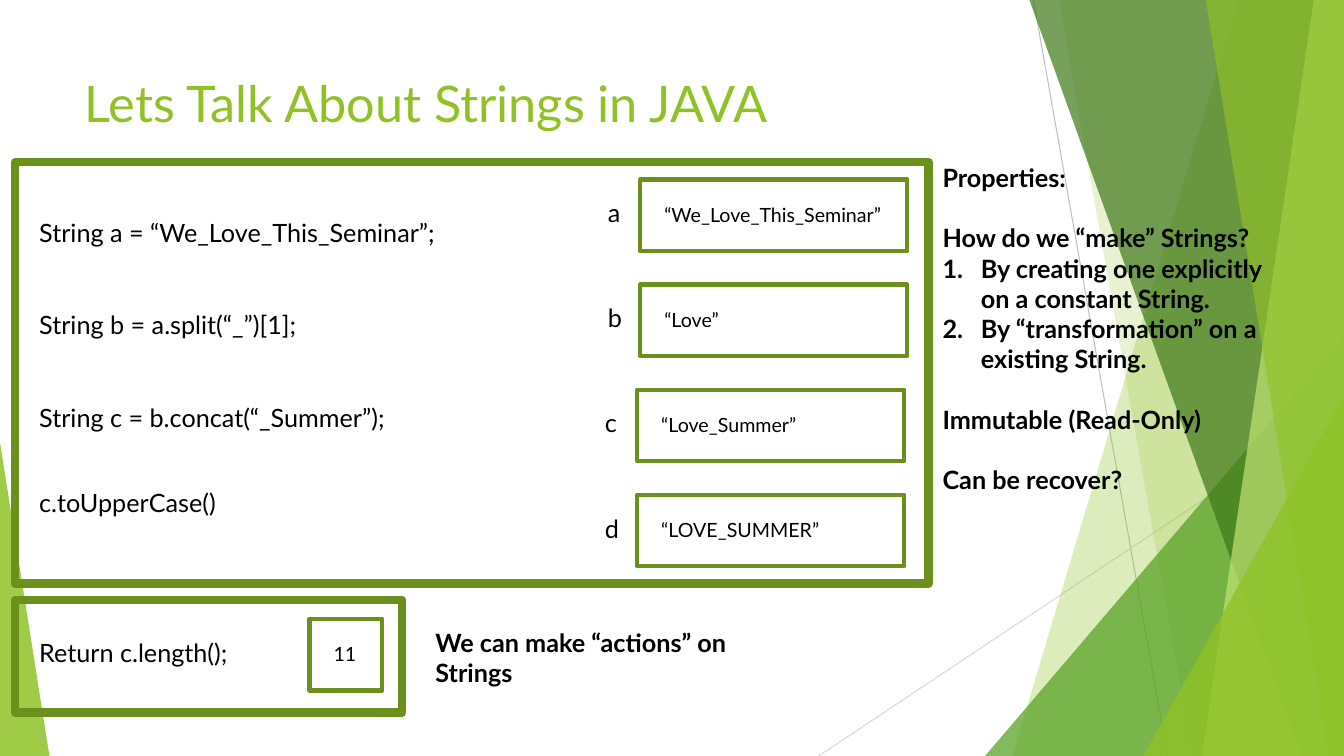
from lxml import etree
from pptx import Presentation
from pptx.dml.color import RGBColor
from pptx.enum import shapes, text
from pptx.oxml.ns import qn
from pptx.util import Inches, Pt

WIDE, HIGH = 13.33, 7.5
FONT = "Lato"
COLORS = {
    "lime": "90C226", "leaf": "54A021", "pine": "3F7819", "pale": "C0E474",
    "frame": "6B901C", "ink": "000000", "gray": "BFBFBF", "mist": "D9D9D9",
}
# top x, bottom x, color, opacity in percent
BANDS = [
    (12.28, 10.04, "lime", 30),
    (10.5, 11.83, "lime", 20),
    (10.21, 12.91, "pine", 70),
    (13.03, 11.92, "pale", 70),
    (11.96, 13.18, "lime", 65),
]
CODE = [
    (2.11, "String a = “We_Love_This_Seminar”;"),
    (3.02, "String b = a.split(“_”)[1];"),
    (3.94, "String c = b.concat(“_Summer”);"),
    (4.79, "c.toUpperCase()"),
    (6.27, "Return c.length();"),
]
# name, value, left edge of the box
VALUES = [
    ("a", "“We_Love_This_Seminar”", 6.35),
    ("b", "“Love”", 6.35),
    ("c", "“Love_Summer”", 6.32),
    ("d", "“LOVE_SUMMER”", 6.32),
]
# words, numbered, space before in points
NOTES = [
    ("Properties:", False, 0),
    ("How do we “make” Strings?", False, 21.6),
    ("By creating one explicitly on a constant String.", True, 0),
    ("By “transformation” on a existing String.", True, 0),
    ("Immutable (Read-Only)", False, 21.6),
    ("Can be recover?", False, 21.6),
]


def rgb(name):
    return RGBColor.from_string(COLORS[name])


def write(para, words, size=18, color="ink", bold=False, before=0):
    para.alignment = text.PP_ALIGN.LEFT
    para.space_before = Pt(before)
    run = para.add_run()
    run.text = words
    font = run.font
    font.name, font.size, font.bold = FONT, Pt(size), bold
    font.color.rgb = rgb(color)


def number(para):
    props = para._p.get_or_add_pPr()
    props.set("marL", str(Inches(0.38)))
    props.set("indent", str(Inches(-0.38)))
    etree.SubElement(props, qn("a:buAutoNum"), type="arabicPeriod")


def add_text(slide, left, top, width, height, wrap=True):
    box = slide.shapes.add_textbox(
        Inches(left), Inches(top), Inches(width), Inches(height))
    box.text_frame.word_wrap = wrap
    return box.text_frame


def label(slide, words, left, top, width, height=0.4, wrap=True, **form):
    frame = add_text(slide, left, top, width, height, wrap)
    write(frame.paragraphs[0], words, **form)


def add_box(slide, left, top, width, height, weight=3):
    box = slide.shapes.add_shape(
        shapes.MSO_SHAPE.RECTANGLE,
        Inches(left), Inches(top), Inches(width), Inches(height))
    box.shadow.inherit = False
    box.fill.background()
    box.line.color.rgb = rgb("frame")
    box.line.width = Pt(weight)


def tint(shape, color, alpha):
    """Fill without outline, at an opacity in percent."""
    shape.shadow.inherit = False
    shape.line.fill.background()
    shape.fill.solid()
    shape.fill.fore_color.rgb = rgb(color)
    tone = shape.fill._xPr.find(qn("a:solidFill"))[0]
    etree.SubElement(tone, qn("a:alpha"), val=str(alpha * 1000))


def add_band(slide, top, base, color, alpha):
    """Quad from two x values to the right edge of the slide."""
    build = slide.shapes.build_freeform(Inches(top), 0)
    build.add_line_segments([
        (Inches(WIDE), 0), (Inches(WIDE), Inches(HIGH)),
        (Inches(base), Inches(HIGH))])
    tint(build.convert_to_shape(), color, alpha)


def add_peak(slide, left, top, width, tip, color, alpha):
    """Triangle that stands on the bottom edge of the slide."""
    peak = slide.shapes.add_shape(
        shapes.MSO_SHAPE.ISOSCELES_TRIANGLE,
        Inches(left), Inches(top), Inches(width), Inches(HIGH - top))
    peak.adjustments[0] = tip
    tint(peak, color, alpha)


def add_line(slide, x1, y1, x2, y2, color):
    line = slide.shapes.add_connector(
        shapes.MSO_CONNECTOR.STRAIGHT,
        Inches(x1), Inches(y1), Inches(x2), Inches(y2))
    line.line.color.rgb = rgb(color)
    line.line.width = Pt(0.75)
    etree.SubElement(line._element.spPr, qn("a:effectLst"))


def add_decor(slide):
    add_line(slide, 10.25, 0, 11.58, HIGH, "gray")
    add_line(slide, WIDE, 4.03, 8.12, HIGH, "mist")
    for band in BANDS[:2]:
        add_band(slide, *band)
    add_peak(slide, 9.77, 3.33, 3.56, 1, "leaf", 72)
    for band in BANDS[2:]:
        add_band(slide, *band)
    add_peak(slide, 11.34, 3.93, 1.99, 1, "lime", 80)
    add_peak(slide, 0, 4.39, 0.49, 0, "lime", 85)


def add_title(slide, words):
    title = slide.shapes.title
    title.left, title.top = Inches(0.74), Inches(0.67)
    title.width, title.height = Inches(9.4), Inches(1.44)
    title.text_frame.vertical_anchor = text.MSO_ANCHOR.TOP
    write(title.text_frame.paragraphs[0], words, size=36, color="lime")


def add_value(slide, words, left, top, width):
    add_box(slide, left, top, width, 0.71)
    label(slide, words, left + 0.14, top + 0.18, width - 0.14, 0.34, size=14)


def add_notes(slide):
    frame = add_text(slide, 9.25, 1.56, 3.59, 3.74)
    for i, (words, listed, before) in enumerate(NOTES):
        para = frame.add_paragraph() if i else frame.paragraphs[0]
        write(para, words, bold=True, before=before)
        if listed:
            number(para)


def main():
    deck = Presentation()
    deck.slide_width, deck.slide_height = Inches(WIDE), Inches(HIGH)
    slide = deck.slides.add_slide(deck.slide_layouts[5])
    add_decor(slide)
    add_title(slide, "Lets Talk About Strings in JAVA")
    for top, words in CODE:
        label(slide, words, 0.29, top, 4.35, wrap=False)
    for i, (name, words, left) in enumerate(VALUES):
        top = 1.78 + i * 1.043
        add_value(slide, words, left, top, 2.65)
        label(slide, name, left - 0.42, top + 0.13, 0.45)
    add_value(slide, "11", 3.07, 6.14, 0.72)
    add_box(slide, 0.15, 1.61, 9.06, 4.18, weight=6)
    add_notes(slide)
    label(slide, "We can make “actions” on Strings", 4.22, 6.17, 3.59, 0.71,
          bold=True)
    add_box(slide, 0.15, 5.95, 3.84, 1.12, weight=6)
    deck.save("out.pptx")


if __name__ == "__main__":
    main()
